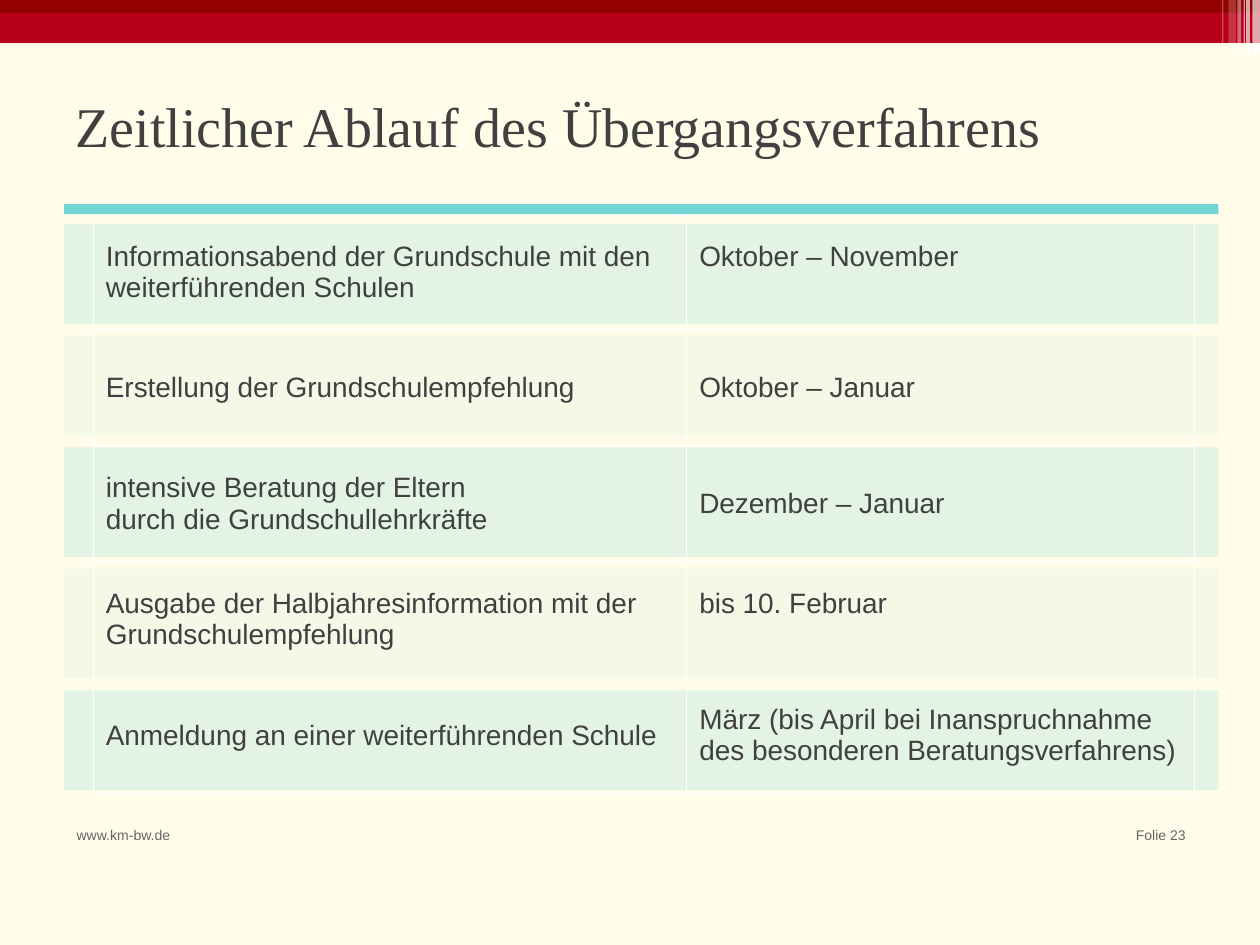
from lxml import etree
from pptx import Presentation
from pptx.dml.color import RGBColor
from pptx.enum import shapes, text
from pptx.oxml.ns import qn
from pptx.util import Inches, Pt

# Content
TITLE = "Zeitlicher Ablauf des Übergangsverfahrens"
SCHEDULE = [  # paragraphs of the step, period, period on the step's first line
    (["Informationsabend der Grundschule mit den weiterführenden Schulen"],
     "Oktober – November", True),
    (["Erstellung der Grundschulempfehlung"], "Oktober – Januar", False),
    (["intensive Beratung der Eltern", "durch die Grundschullehrkräfte"],
     "Dezember – Januar", False),
    (["Ausgabe der Halbjahresinformation mit der Grundschulempfehlung"],
     "bis 10. Februar", True),
    (["Anmeldung an einer weiterführenden Schule"],
     "März (bis April bei Inanspruchnahme des besonderen Beratungsverfahrens)", False),
]
WEBSITE, PAGE = "www.km-bw.de", "Folie 23"

# Colours
CREAM = RGBColor(0xFF, 0xFD, 0xE9)
RED = RGBColor(0xB7, 0x00, 0x17)
DARK_RED = RGBColor(0x92, 0x00, 0x00)
WHITE = RGBColor(0xFF, 0xFF, 0xFF)
TURQUOISE = RGBColor(0x73, 0xD4, 0xD6)
DARK = RGBColor(0x40, 0x40, 0x40)
GREY = RGBColor(0x64, 0x64, 0x64)

# Geometry in inches
STRIPES = [  # left, width, height, opacity in percent
    (9.89, 0.03, 0.43, 65), (9.94, 0.06, 0.43, 65), (9.7, 0.01, 0.64, 30),
    (9.87, 0.01, 0.68, 60), (9.75, 0.06, 0.43, 20), (9.82, 0.03, 0.43, 40),
]
BAND_LEFT, BAND_WIDTH, BAND_GAP = 0.51, 9.16, 0.095
BAND_HEIGHTS = [0.79, 0.79, 0.87, 0.87, 0.79]
BAND_OPACITY = [20, 8]
COLUMNS = [4.71, 4.03]
ROW_HEIGHT = 0.92
LINE_HEIGHT = 0.25

prs = Presentation()
prs.slide_width, prs.slide_height = Inches(10), Inches(7.5)
slide = prs.slides.add_slide(prs.slide_layouts[5])
slide.background.fill.solid()
slide.background.fill.fore_color.rgb = CREAM


def add_bar(left, top, width, height, color, opacity=100):
    bar = slide.shapes.add_shape(shapes.MSO_SHAPE.RECTANGLE, Inches(left), Inches(top),
                                 Inches(width), Inches(height))
    bar.shadow.inherit = False
    bar.line.fill.background()
    bar.fill.solid()
    bar.fill.fore_color.rgb = color
    if opacity < 100:
        rgb = bar._element.spPr.find(qn("a:solidFill"))[0]
        etree.SubElement(rgb, qn("a:alpha")).set("val", str(opacity * 1000))


def write(frame, paragraphs, size, color, font="Arial", align=text.PP_ALIGN.LEFT):
    frame.word_wrap = True
    for i, line in enumerate(paragraphs):
        paragraph = frame.paragraphs[0] if i == 0 else frame.add_paragraph()
        paragraph.alignment = align
        run = paragraph.add_run()
        run.text = line
        run.font.name, run.font.size = font, Pt(size)
        run.font.color.rgb = color


# Header bars and stripes
add_bar(0, 0, 10, 0.34, RED)
add_bar(0, 0, 10, 0.1, DARK_RED)
for left, width, height, opacity in STRIPES:
    add_bar(left, 0, width, height, WHITE, opacity)

# Bands behind the schedule
top = 1.78
for i, height in enumerate(BAND_HEIGHTS):
    add_bar(BAND_LEFT, top, BAND_WIDTH, height, TURQUOISE, BAND_OPACITY[i % 2])
    top += height + BAND_GAP

# Schedule
schedule = slide.shapes.add_table(
    len(SCHEDULE), len(COLUMNS), Inches(0.74), Inches(1.7),
    Inches(sum(COLUMNS)), Inches(ROW_HEIGHT * len(SCHEDULE))).table
schedule.first_row = schedule.horz_banding = False
for column, width in zip(schedule.columns, COLUMNS):
    column.width = Inches(width)
for r, (step, period, on_first_line) in enumerate(SCHEDULE):
    for c, paragraphs in enumerate([step, [period]]):
        cell = schedule.cell(r, c)
        cell.fill.background()
        cell.vertical_anchor = text.MSO_ANCHOR.MIDDLE
        write(cell.text_frame, paragraphs, 16, DARK)
    if on_first_line:
        cell.margin_bottom = Inches(0.05 + LINE_HEIGHT)

# Footer
for left, width, label, align in [(0.51, 1, WEBSITE, text.PP_ALIGN.LEFT),
                                  (8.54, 0.97, PAGE, text.PP_ALIGN.RIGHT)]:
    footer = slide.shapes.add_textbox(Inches(left), Inches(6.51), Inches(width), Inches(0.39))
    write(footer.text_frame, [label], 8, GREY, align=align)

# Title and rule
title = slide.shapes.title
title.left, title.top, title.width, title.height = (
    Inches(0.5), Inches(0.61), Inches(9), Inches(0.77))
title.text_frame.vertical_anchor = text.MSO_ANCHOR.MIDDLE
write(title.text_frame, [TITLE], 32, DARK, "Times New Roman")
add_bar(BAND_LEFT, 1.62, BAND_WIDTH, 0.08, TURQUOISE)

prs.save("out.pptx")
